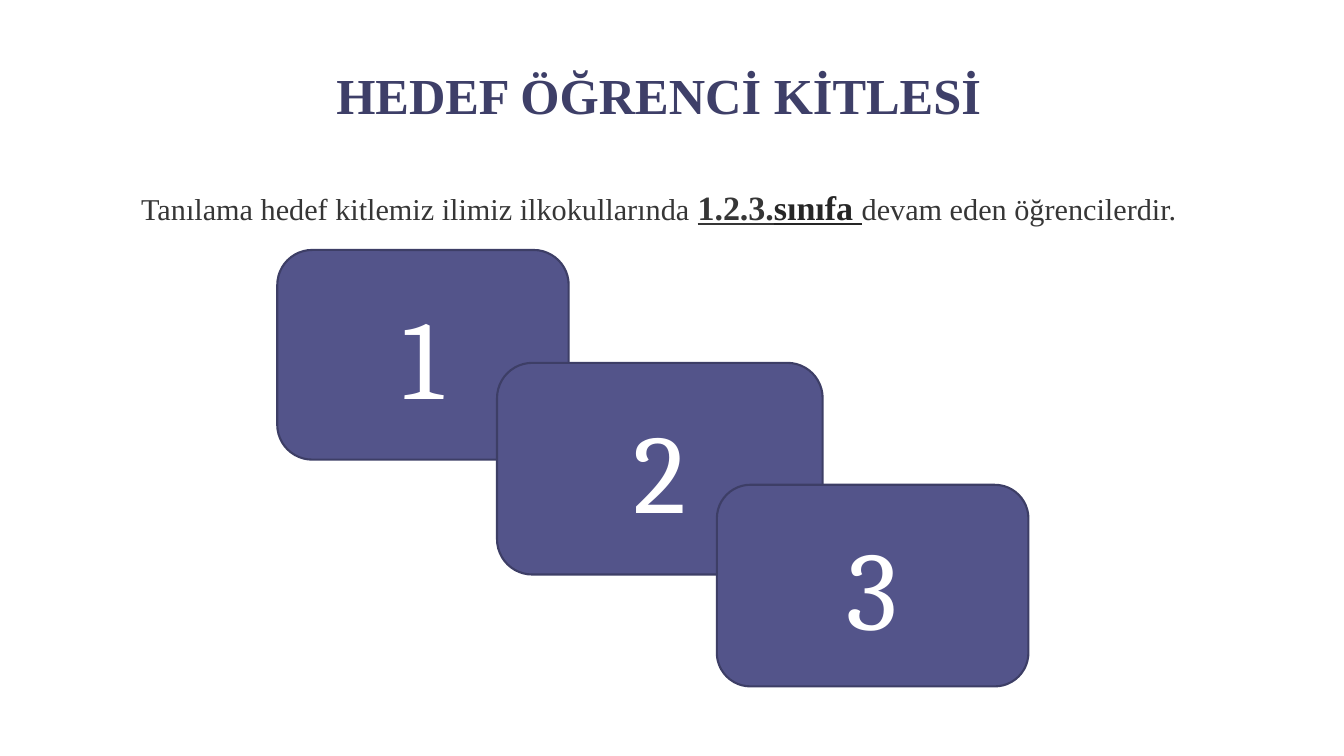
import pptx
import pptx.util
import pptx.dml.color
import pptx.enum.shapes
import pptx.enum.text
from dataclasses import dataclass
from pptx.util import Inches


@dataclass(frozen=True)
class Theme:
    heading: str = "3E3F68"
    body: str = "363636"
    emphasis: str = "262626"
    card_fill: str = "53548A"
    card_line: str = "3D3E66"
    card_text: str = "FFFFFF"
    text_font: str = "Times New Roman"
    number_font: str = "Cambria"
    heading_size: float = 36
    body_size: float = 21.6
    emphasis_size: float = 24.3
    number_size: float = 80
    paragraph_gap: float = 44


theme = Theme()

heading = "HEDEF ÖĞRENCİ KİTLESİ"
sentence = [
    ("Tanılama hedef kitlemiz ilimiz ilkokullarında ", {}),
    ("1.2.3.", dict(size=theme.emphasis_size, bold=True, underline=True)),
    ("sınıfa ", dict(size=theme.emphasis_size, bold=True, underline=True,
                     color=theme.emphasis)),
    ("devam eden öğrencilerdir.", {}),
]
grades = [("1", 2.48, 2.89, 2.08), ("2", 3.6, 3.23, 2.1), ("3", 4.81, 3.09, 2)]
first_left, step = 2.75, 2.18


def rgb(value):
    return pptx.dml.color.RGBColor.from_string(value)


def add_text(paragraph, text, *, size=theme.body_size, color=theme.body,
             font=theme.text_font, bold=False, underline=False):
    paragraph.alignment = pptx.enum.text.PP_ALIGN.CENTER
    run = paragraph.add_run()
    run.text = text
    run.font.size = pptx.util.Pt(size)
    run.font.name = font
    run.font.bold = bold
    run.font.underline = underline
    run.font.color.rgb = rgb(color)


def add_title(slide):
    title = slide.shapes.title
    title.left, title.top = Inches(0.93), Inches(0.29)
    title.width, title.height = Inches(11.21), Inches(1.59)
    frame = title.text_frame
    frame.word_wrap = True
    frame.auto_size = pptx.enum.text.MSO_AUTO_SIZE.NONE
    frame.vertical_anchor = pptx.enum.text.MSO_ANCHOR.TOP
    frame.margin_top = Inches(0.35)
    add_text(frame.paragraphs[0], heading, size=theme.heading_size,
             color=theme.heading, bold=True)
    paragraph = frame.add_paragraph()
    paragraph.space_before = pptx.util.Pt(theme.paragraph_gap)
    for text, style in sentence:
        add_text(paragraph, text, **style)


def add_card(slide, number, left, top, width, height):
    card = slide.shapes.add_shape(
        pptx.enum.shapes.MSO_SHAPE.ROUNDED_RECTANGLE,
        Inches(left), Inches(top), Inches(width), Inches(height))
    card.shadow.inherit = False
    card.fill.solid()
    card.fill.fore_color.rgb = rgb(theme.card_fill)
    card.line.color.rgb = rgb(theme.card_line)
    card.line.width = pptx.util.Pt(1.5)
    card.text_frame.vertical_anchor = pptx.enum.text.MSO_ANCHOR.MIDDLE
    add_text(card.text_frame.paragraphs[0], number, size=theme.number_size,
             color=theme.card_text, font=theme.number_font)


def main():
    presentation = pptx.Presentation()
    presentation.slide_width = Inches(13.33)
    presentation.slide_height = Inches(7.5)
    slide = presentation.slides.add_slide(presentation.slide_layouts[5])
    add_title(slide)
    for index, (number, top, width, height) in enumerate(grades):
        add_card(slide, number, first_left + index * step, top, width, height)
    presentation.save("out.pptx")


if __name__ == "__main__":
    main()
